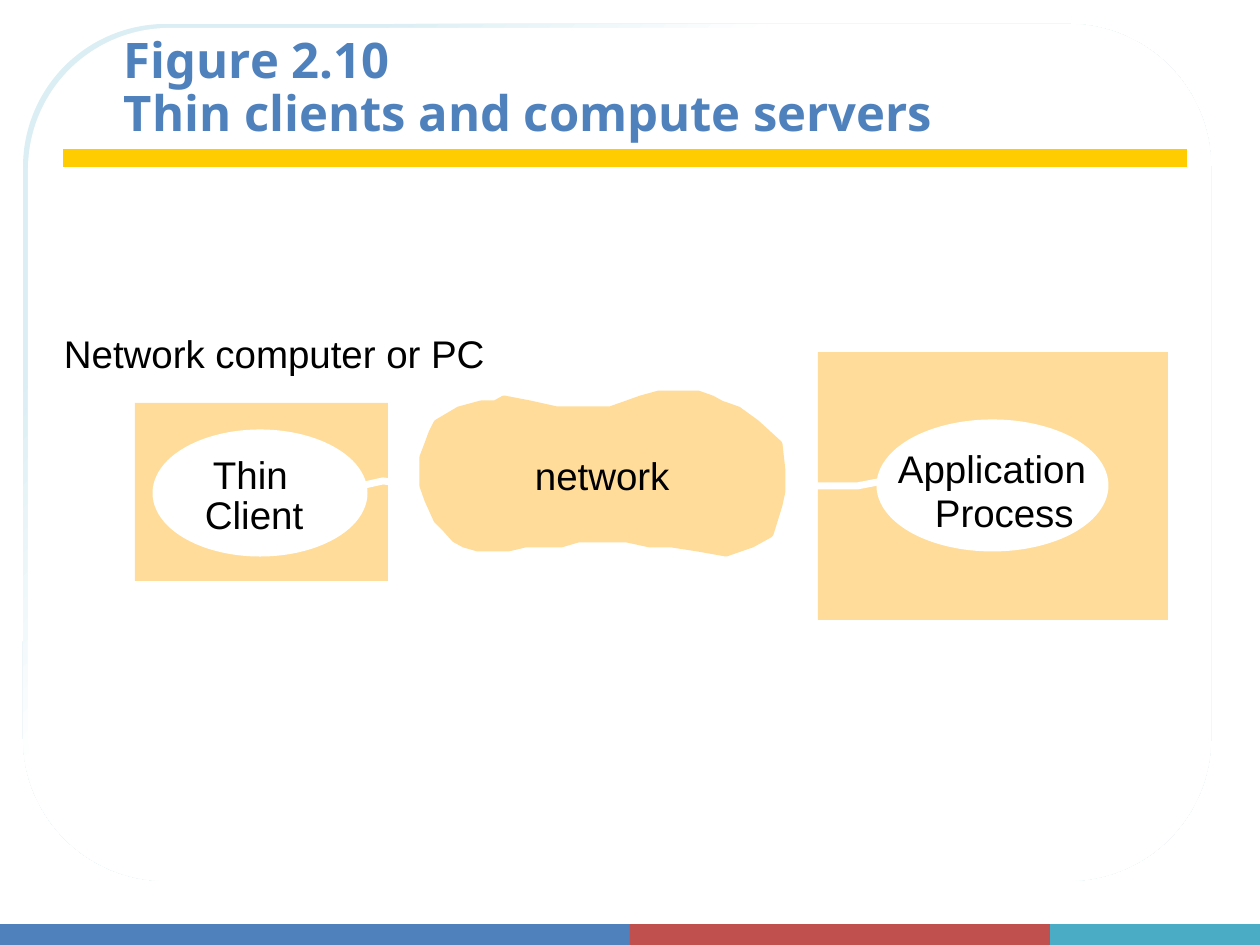
from dataclasses import dataclass

from lxml import etree
from pptx import Presentation
from pptx.dml.color import RGBColor
from pptx.enum.shapes import MSO_CONNECTOR, MSO_SHAPE
from pptx.enum.text import MSO_ANCHOR, MSO_AUTO_SIZE
from pptx.oxml.ns import qn
from pptx.util import Pt

RECT, ROUNDED, OVAL = MSO_SHAPE.RECTANGLE, MSO_SHAPE.ROUNDED_RECTANGLE, MSO_SHAPE.OVAL
STRAIGHT = MSO_CONNECTOR.STRAIGHT
TOP, BOTTOM = MSO_ANCHOR.TOP, MSO_ANCHOR.BOTTOM
GROW = MSO_AUTO_SIZE.SHAPE_TO_FIT_TEXT

EMU_PER_PX = 914400 / 126
SLIDE_W, SLIDE_H = 1260, 945


@dataclass(frozen=True)
class Theme:
    blue: str = "4F81BD"
    red: str = "C0504D"
    teal: str = "4BACC6"
    pale: str = "DBEEF4"
    gold: str = "FFCC00"
    sand: str = "FFDC99"
    white: str = "FFFFFF"
    black: str = "000000"
    title_font: str = "Noto Sans"
    label_font: str = "Arial"
    title_size: int = 28
    label_size: int = 22
    rule_width: int = 10
    outline_width: int = 4


def px(*lengths):
    return [round(length * EMU_PER_PX) for length in lengths]


def rgb(value):
    return RGBColor.from_string(value)


class SlideBuilder:
    def __init__(self, slide, theme):
        self.shapes = slide.shapes
        self.theme = theme

    def paint(self, shape, fill=None, line=None):
        shape.shadow.inherit = False
        if fill:
            shape.fill.solid()
            shape.fill.fore_color.rgb = rgb(fill)
        else:
            shape.fill.background()
        if line:
            shape.line.color.rgb = rgb(line)
            shape.line.width = Pt(self.theme.outline_width)
        else:
            shape.line.fill.background()

    def shape(self, kind, box, fill, line=None):
        shape = self.shapes.add_shape(kind, *px(*box))
        self.paint(shape, fill, line)
        return shape

    def fade(self, shape, start, end):
        """Fill with a gradient from top left to bottom right; ends are (position, colour)."""
        shape.fill.gradient()
        shape.fill.gradient_angle = 315
        for stop, (position, color) in zip(shape.fill.gradient_stops, (start, end)):
            stop.position = position
            stop.color.rgb = rgb(color)

    def freeform(self, points, fill=None, line=None, close=False):
        builder = self.shapes.build_freeform(*points[0], scale=EMU_PER_PX)
        builder.add_line_segments(points[1:], close=close)
        self.paint(builder.convert_to_shape(), fill, line)

    def rule(self, start, end, color, width):
        rule = self.shapes.add_connector(STRAIGHT, *px(*start, *end))
        rule.line.color.rgb = rgb(color)
        rule.line.width = Pt(width)
        etree.SubElement(rule._element.spPr, qn("a:effectLst"))

    def text(self, content, box, *, font=None, size=None, color=None, bold=False,
             anchor=TOP, insets=(0, 0, 0, 0), spacing=None, wrap=False):
        frame = self.shapes.add_textbox(*px(*box)).text_frame
        frame.word_wrap = wrap
        frame.auto_size = GROW
        frame.vertical_anchor = anchor
        (frame.margin_left, frame.margin_top,
         frame.margin_right, frame.margin_bottom) = px(*insets)
        paragraph = frame.paragraphs[0]
        paragraph.line_spacing = spacing
        paragraph.text = content
        for run in paragraph.runs:
            run.font.name = font or self.theme.label_font
            run.font.size = Pt(size or self.theme.label_size)
            run.font.bold = bold
            run.font.color.rgb = rgb(color or self.theme.black)


THEME = Theme()
FOOTER_BARS = [(0, 635, THEME.blue), (630, 430, THEME.red), (1050, 210, THEME.teal)]
COMPUTERS = [
    ((135, 403, 253, 178), (156, 433, 208, 120)),
    ((818, 352, 350, 268), (880, 423, 225, 125)),
]
LINKS = [
    [(365, 485), (383, 481), (415, 485), (426, 488), (438, 491)],
    [(883, 481), (857, 486), (809, 486), (772, 486), (751, 486)],
]
CLOUD = [
    (432, 433), (437, 423), (459, 410), (481, 404), (495, 404), (504, 399),
    (530, 404), (557, 410), (610, 410), (627, 404), (641, 399), (659, 394),
    (698, 394), (712, 399), (721, 404), (738, 410), (756, 423), (779, 444),
    (782, 471), (782, 491), (779, 505), (770, 534), (752, 544), (726, 553),
    (698, 548), (672, 544), (650, 544), (627, 539), (578, 539), (561, 544),
    (525, 544), (508, 548), (478, 548), (464, 544), (455, 539), (446, 529),
    (437, 520), (428, 500), (423, 486), (423, 457), (428, 444),
]
LABELS = [
    ("Thin", 213, 451, 76),
    ("Client", 205, 491, 100),
    ("Application", 898, 445, 190),
    ("Process", 935, 489, 140),
    ("Network computer or PC", 64, 330, 426),
    ("network", 535, 452, 136),
]
LABEL_H = 47


def main():
    deck = Presentation()
    deck.slide_width, deck.slide_height = px(SLIDE_W, SLIDE_H)
    page = SlideBuilder(deck.slides.add_slide(deck.slide_layouts[6]), THEME)

    for left, width, color in FOOTER_BARS:
        page.shape(RECT, (left, 924, width, 21), color)
    border = page.shape(ROUNDED, (23, 24, 1188, 857), THEME.white)
    page.fade(border, (0.17, THEME.pale), (0.37, THEME.white))
    page.shape(ROUNDED, (28, 28, 1178, 849), THEME.white)

    page.rule((63, 158), (1187, 158), THEME.gold, THEME.rule_width)
    page.text("Figure 2.10\vThin clients and compute servers", (111, 28, 1071, 120),
              font=THEME.title_font, size=THEME.title_size, color=THEME.blue, bold=True,
              anchor=BOTTOM, insets=(13, 6, 18, 6), spacing=0.9, wrap=True)

    for computer, process in COMPUTERS:
        page.shape(RECT, computer, THEME.sand)
        page.shape(OVAL, process, THEME.white, THEME.white)
    for link in LINKS:
        page.freeform(link, line=THEME.white)
    page.freeform(CLOUD, THEME.sand, THEME.sand, close=True)

    for label, left, top, width in LABELS:
        page.text(label, (left, top, width, LABEL_H))

    deck.save("out.pptx")


if __name__ == "__main__":
    main()
